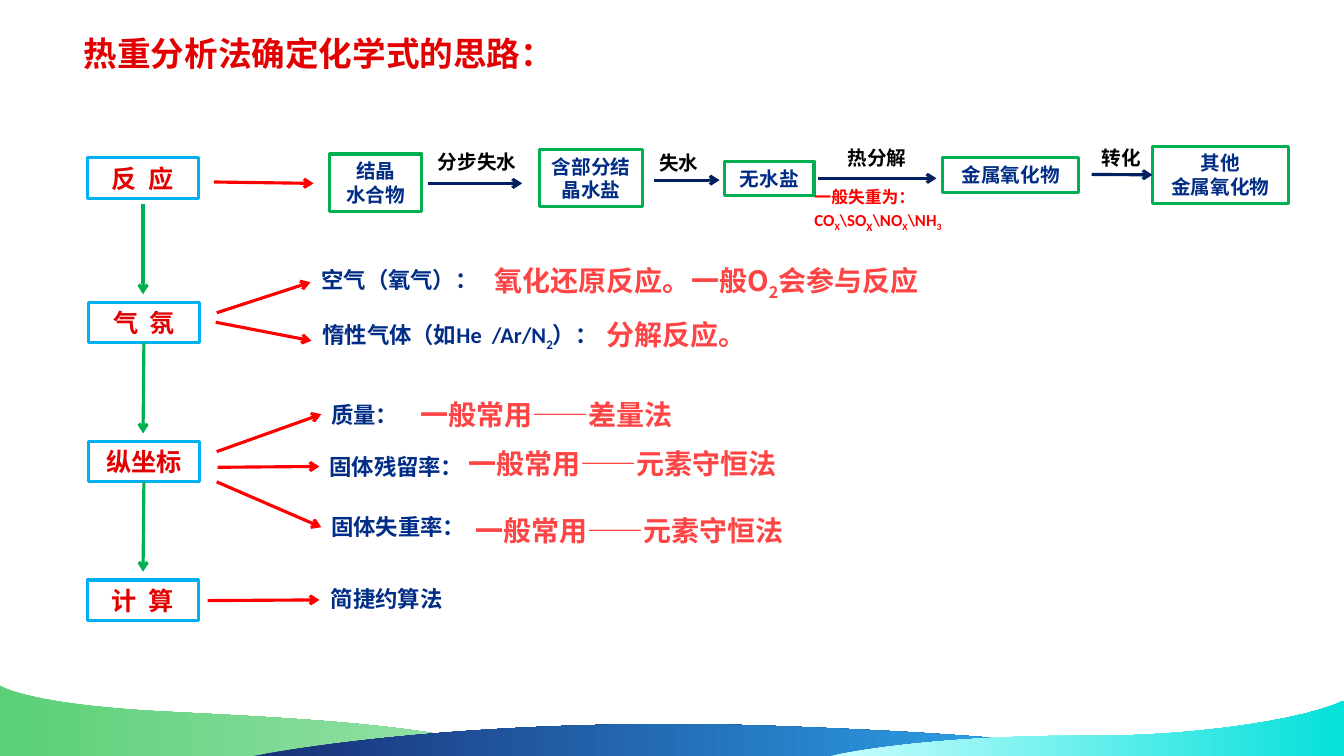
from dataclasses import dataclass

from lxml import etree
from pptx import Presentation
from pptx.dml.color import RGBColor
from pptx.enum.shapes import MSO_CONNECTOR, MSO_SHAPE
from pptx.enum.text import MSO_ANCHOR, MSO_AUTO_SIZE, PP_ALIGN
from pptx.oxml.ns import qn
from pptx.util import Pt

RECT = MSO_SHAPE.RECTANGLE
STRAIGHT = MSO_CONNECTOR.STRAIGHT
TOP = MSO_ANCHOR.TOP
GROW = MSO_AUTO_SIZE.SHAPE_TO_FIT_TEXT
LEFT, CENTER = PP_ALIGN.LEFT, PP_ALIGN.CENTER
CALIBRI, NOTO = "Calibri", "Noto Sans CJK SC"
COLORS = {
    "title": "E30000", "navy": "012D86", "coral": "FE4444", "black": "000000",
    "red": "FF0000", "green": "00B050", "sky": "00B0F0", "dark": "002060",
    "leaf": "5BD078", "mint": "9DE3AE", "ink": "182F77", "azure": "31B6FD",
    "ice": "C8FEFD", "aqua": "05E0DB",
}


@dataclass(frozen=True)
class Style:
    size: int
    color: str
    font: str = CALIBRI
    edge: str = ""
    wrap: bool = True


@dataclass(frozen=True)
class Label:
    text: str
    left: float
    top: float
    width: float
    height: float
    style: Style


@dataclass(frozen=True)
class Arrow:
    start: tuple[float, float]
    end: tuple[float, float]
    color: str
    source: str = ""
    target: str = ""


@dataclass(frozen=True)
class Wave:
    start: tuple[float, float]
    curves: tuple
    colors: tuple[str, str]


HEAD = Style(24, "title")
STAGE = Style(18, "title", edge="sky")
STEP = Style(14, "navy", edge="green")
NOTE = Style(14, "black")
SHORT = Style(14, "black", wrap=False)
LOSS = Style(12, "red")
TOPIC = Style(16, "navy")
ANSWER = Style(20, "coral", NOTO)

TITLE = Label("热重分析法确定化学式的思路：", 52.6, 20.2, 461.5, 36, HEAD)
FORMULA = Label("一般失重为：CO|X|\\SO|X|\\NO|X|\\NH|3", 574.7, 130, 109.4, 36, LOSS)
LABELS = [
    Label("反  应", 62.4, 112.8, 79.2, 28.8, STAGE),
    Label("气  氛", 63.2, 216, 79.2, 28.8, STAGE),
    Label("纵坐标", 63.2, 315.2, 79.2, 28.8, STAGE),
    Label("计  算", 62.4, 414.3, 79.2, 28.8, STAGE),
    Label("结晶\n水合物", 235.6, 110, 65.5, 41, STEP),
    Label("含部分结晶水盐", 385.6, 106.8, 73.4, 41, STEP),
    Label("无水盐", 517.4, 115.2, 64.1, 24.5, STEP),
    Label("金属氧化物", 673.3, 112.8, 97.2, 24.5, STEP),
    Label("其他\n金属氧化物", 823.2, 104.4, 97.2, 41, STEP),
    Label("分步失水", 305.7, 103.7, 77, 24.5, NOTE),
    Label("失水", 463.7, 104.4, 42.6, 24.5, SHORT),
    Label("热分解", 598.3, 100.8, 57, 24.5, SHORT),
    Label("转化", 779.8, 100.8, 42.6, 24.5, SHORT),
    Label("空气（氧气）：", 222.5, 186.5, 128.9, 26.6, TOPIC),
    Label("氧化还原反应。一般O|2|会参与反应", 346.3, 184.6, 366.5, 31.7, ANSWER),
    Label("惰性气体（如He  /Ar/N|2|）：", 223.2, 226.1, 203, 26.6, TOPIC),
    Label("分解反应。", 426.2, 223.2, 129.6, 31.7, ANSWER),
    Label("质量：", 229.4, 283, 72, 26.6, TOPIC),
    Label("一般常用——差量法", 293, 280.1, 197.3, 31.7, ANSWER),
    Label("固体残留率：", 228.2, 320.4, 128.9, 26.6, TOPIC),
    Label("一般常用——元素守恒法", 327.6, 315.4, 336.2, 31.7, ANSWER),
    Label("固体失重率：", 229.5, 362.9, 128.9, 26.6, TOPIC),
    Label("一般常用——元素守恒法", 332.6, 363.2, 336.2, 31.7, ANSWER),
    Label("简捷约算法", 229.2, 414.3, 113.8, 26.6, TOPIC),
]
ARROWS = [
    Arrow((306, 131), (373, 131), "dark"),
    Arrow((467.3, 128.7), (514, 128.7), "dark"),
    Arrow((584.6, 127.4), (668.9, 127.4), "dark"),
    Arrow((779.8, 124.6), (823.2, 124.9), "dark", target="其他\n金属氧化物"),
    Arrow((102.2, 145.4), (102.2, 210.2), "green"),
    Arrow((102.8, 244.8), (102.2, 309.6), "green", source="气  氛"),
    Arrow((102.8, 344), (102.2, 408.4), "green", source="纵坐标"),
    Arrow((152.8, 130), (224, 131), "red"),
    Arrow((154.8, 223.4), (221.8, 201.6), "red"),
    Arrow((154.1, 230.2), (222.5, 243.4), "red"),
    Arrow((154.8, 322.6), (229.5, 295.9), "red"),
    Arrow((155.4, 333.8), (228.2, 333.2), "red"),
    Arrow((154.8, 344.2), (229.5, 376.6), "red"),
    Arrow((148.3, 429), (228.2, 428.5), "red"),
]
WAVES = [
    Wave((0, 489.6), (((0, 489.6), (19.4, 503.3), (117.4, 508.3)),
                      ((215.3, 513.4), (319.7, 517.7), (375.8, 540.5)),
                      ((326.2, 540.5), (0, 540.5), (0, 540.5))), ("leaf", "mint")),
    Wave((178.6, 540.5), (((178.6, 540.5), (321.8, 511.2), (548.6, 518.4)),
                          ((666, 522.7), (740.2, 527.8), (825.1, 540.5)),
                          ((695.5, 540.5), (178.6, 540.5), (178.6, 540.5))),
         ("ink", "azure")),
    Wave((593.3, 540), (((593.3, 540), (661.7, 524.2), (789.1, 525.6)),
                        ((875.5, 524.2), (940.3, 510.5), (960, 500.4)),
                        ((960, 510.5), (960, 540), (960, 540))), ("ice", "aqua")),
]


def paint(name: str) -> RGBColor:
    return RGBColor.from_string(COLORS[name])


def draw_wave(slide, wave: Wave) -> None:
    points = [(Pt(x), Pt(y)) for curve in wave.curves for x, y in curve]
    path = slide.shapes.build_freeform(*(Pt(n) for n in wave.start), scale=1.0)
    path.add_line_segments(points, close=True)
    shape = path.convert_to_shape()
    lines = list(shape._element.iter(qn("a:lnTo")))
    for first in range(0, len(lines), 3):
        curve = etree.Element(qn("a:cubicBezTo"))
        lines[first].addprevious(curve)
        for line in lines[first:first + 3]:
            curve.append(line[0])
            line.getparent().remove(line)
    shape.shadow.inherit = False
    shape.line.fill.background()
    shape.fill.gradient()
    shape.fill.gradient_angle = 0
    for stop, color in zip(shape.fill.gradient_stops, wave.colors):
        stop.color.rgb = paint(color)
    tree = slide.slide_layout.slide_master.shapes._spTree
    shape._element.nvSpPr.cNvPr.set("id", str(20 + len(tree)))
    tree.append(shape._element)


def write(shape, label: Label) -> None:
    style, frame = label.style, shape.text_frame
    frame.word_wrap = style.wrap
    frame.auto_size = GROW
    first, *rest = label.text.split("|")
    frame.text = first
    for text in rest:
        frame.paragraphs[0].add_run().text = text
    for para in frame.paragraphs:
        para.alignment = CENTER if style.edge else LEFT
        for rank, run in enumerate(para.runs):
            font = run.font
            font.size, font.bold, font.name = Pt(style.size), True, style.font
            font.color.rgb = paint(style.color)
            props = run._r.get_or_add_rPr()
            etree.SubElement(props, qn("a:ea")).set("typeface", style.font)
            if rank % 2:
                props.set("baseline", "-25000")


def draw_label(slide, label: Label):
    place = [Pt(n) for n in (label.left, label.top, label.width, label.height)]
    if label.style.edge:
        shape = slide.shapes.add_shape(RECT, *place)
        shape.shadow.inherit = False
        shape.fill.background()
        shape.line.color.rgb = paint(label.style.edge)
        shape.line.width = Pt(2.25)
    else:
        shape = slide.shapes.add_textbox(*place)
    write(shape, label)
    return shape


def draw_arrow(slide, arrow: Arrow, boxes: dict) -> None:
    ends = [Pt(n) for n in (*arrow.start, *arrow.end)]
    line = slide.shapes.add_connector(STRAIGHT, *ends)
    if arrow.source:
        line.begin_connect(boxes[arrow.source], 2)
    if arrow.target:
        line.end_connect(boxes[arrow.target], 1)
    line.line.color.rgb = paint(arrow.color)
    line.line.width = Pt(2.25)
    etree.SubElement(line.line._get_or_add_ln(), qn("a:tailEnd")).set("type", "arrow")
    etree.SubElement(line._element.spPr, qn("a:effectLst"))


def main() -> None:
    deck = Presentation()
    deck.slide_width, deck.slide_height = Pt(960), Pt(540)
    slide = deck.slides.add_slide(deck.slide_layouts[5])
    for wave in WAVES:
        draw_wave(slide, wave)
    title = slide.shapes.title
    title.left, title.top = Pt(TITLE.left), Pt(TITLE.top)
    title.width, title.height = Pt(TITLE.width), Pt(TITLE.height)
    title.text_frame.vertical_anchor = TOP
    write(title, TITLE)
    boxes = {label.text: draw_label(slide, label) for label in LABELS}
    loss = draw_label(slide, FORMULA)
    loss.text_frame.paragraphs[0].runs[3].font.size = Pt(14)
    for arrow in ARROWS:
        draw_arrow(slide, arrow, boxes)
    deck.save("out.pptx")


if __name__ == "__main__":
    main()
